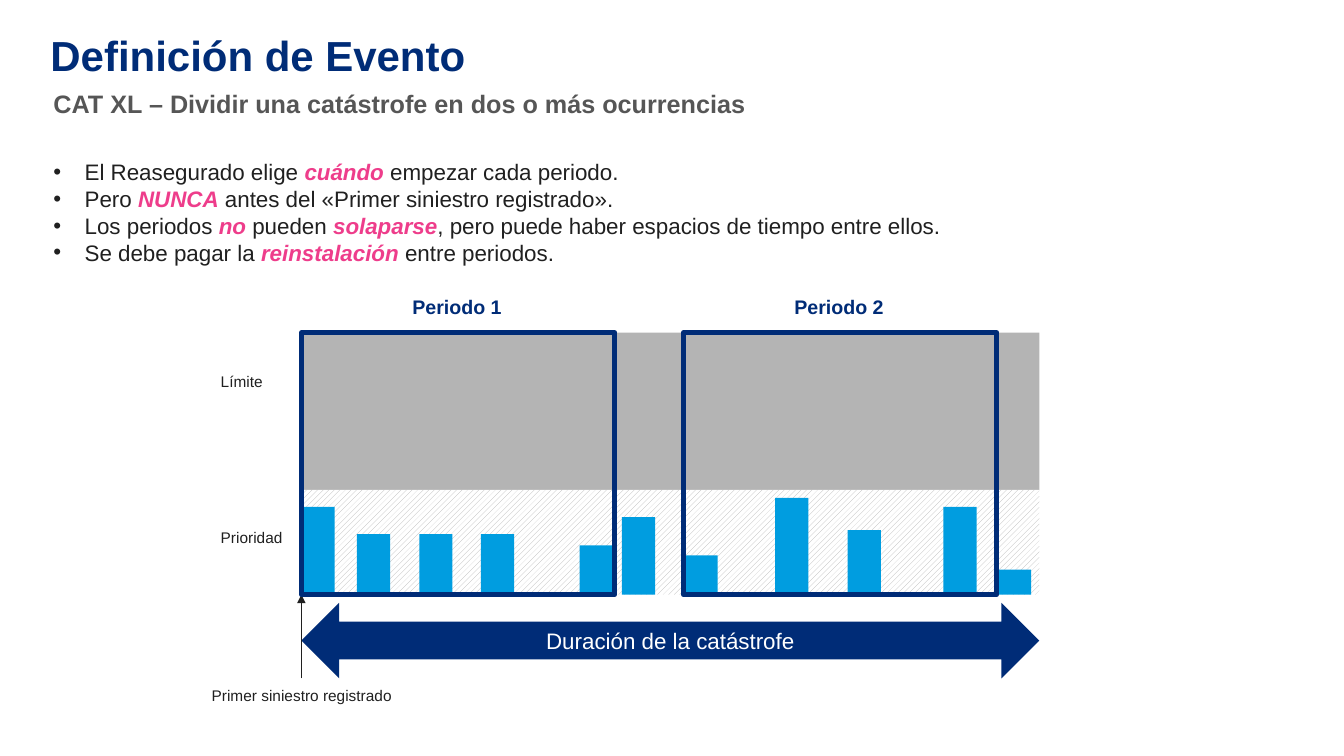
from typing import NamedTuple

from lxml import etree
from pptx import Presentation
from pptx.dml.color import RGBColor
from pptx.enum.dml import MSO_PATTERN
from pptx.enum.shapes import MSO_CONNECTOR, MSO_SHAPE
from pptx.enum.text import MSO_ANCHOR, MSO_AUTO_SIZE, PP_ALIGN
from pptx.oxml.ns import qn
from pptx.util import Inches, Pt

RECT, ARROW = MSO_SHAPE.RECTANGLE, MSO_SHAPE.LEFT_RIGHT_ARROW
STRAIGHT = MSO_CONNECTOR.STRAIGHT
HATCH = MSO_PATTERN.WIDE_UPWARD_DIAGONAL
LEFT, CENTER = PP_ALIGN.LEFT, PP_ALIGN.CENTER
TOP, MIDDLE = MSO_ANCHOR.TOP, MSO_ANCHOR.MIDDLE
NO_FIT = MSO_AUTO_SIZE.NONE

FONT = "Arial"
COLORS = {"navy": "002C77", "blue": "009DE0", "gray": "B4B4B4", "subtitle": "565656",
          "text": "202020", "pink": "EE3D8B", "white": "FFFFFF"}

# Grid of square cells: about 133 columns by 75 rows
CELL = Inches(0.1)
COLS, ROWS = 133.33, 75


class Box(NamedTuple):
    col: float
    row: float
    cols: float
    rows: float


class Bar(NamedTuple):
    col: float
    rows: float


class Label(NamedTuple):
    text: str
    box: Box
    size: int = 11
    color: str = "text"
    bold: bool = False


# Chart area
START, SPAN = 29.9, 73.2
LIMIT_ROW, PRIORITY_ROW, BASE_ROW = 33, 48.6, 59
ARROW_ROW, ARROW_ROWS = 59.8, 7.5
BAR_COLS, PERIOD_COLS = 3.3, 31.1
PERIOD_STARTS = [START, 67.8]

BARS = [Bar(START, 8.7), Bar(35.4, 6), Bar(41.6, 6), Bar(47.7, 6), Bar(57.5, 4.9),
        Bar(61.7, 7.7), Bar(67.9, 3.9), Bar(76.9, 9.6), Bar(84.1, 6.4),
        Bar(93.6, 8.7), Bar(99, 2.5)]
LABELS = [Label("Primer siniestro registrado", Box(21, 68.1, 18, 1.9)),
          Label("Prioridad", Box(21.9, 52.4, 6.6, 1.9)),
          Label("Límite", Box(21.9, 36.9, 4.6, 1.9))]
LABELS += [Label(f"Periodo {n}", Box(col + 11, 29.3, 9.1, 2.4), 14, "navy", True)
           for n, col in enumerate(PERIOD_STARTS, 1)]
# Asterisks enclose the highlighted words
RULES = ["El Reasegurado elige *cuándo* empezar cada periodo.",
         "Pero *NUNCA* antes del «Primer siniestro registrado».",
         "Los periodos *no* pueden *solaparse*, pero puede haber espacios de tiempo entre ellos.",
         "Se debe pagar la *reinstalación* entre periodos."]


def rgb(name: str) -> RGBColor:
    return RGBColor.from_string(COLORS[name])


def cells(*values: float) -> list[int]:
    return [round(v * CELL) for v in values]


def write(sp, lines: list[str], *, size: int, color: str = "text", bold: bool = False,
          align=LEFT, anchor=TOP, wrap: bool = True, bullet: bool = False,
          spacing: float = 1.0, after: float = 0) -> None:
    """Fill a shape with paragraphs; words between asterisks are highlighted."""
    tf = sp.text_frame
    tf.auto_size, tf.word_wrap, tf.vertical_anchor = NO_FIT, wrap, anchor
    tf.margin_left = tf.margin_right = tf.margin_top = tf.margin_bottom = 0
    for i, line in enumerate(lines):
        p = tf.paragraphs[0] if i == 0 else tf.add_paragraph()
        indent = Inches(0.31) if bullet else 0
        pPr = p._p.get_or_add_pPr()
        pPr.set("marL", str(indent))
        pPr.set("indent", str(-indent))
        if bullet:
            etree.SubElement(pPr, qn("a:buChar")).set("char", "•")
        else:
            etree.SubElement(pPr, qn("a:buNone"))
        p.alignment, p.line_spacing = align, spacing
        p.space_before, p.space_after = Pt(0), Pt(after)
        for j, part in enumerate(line.split("*")):
            marked = j % 2 == 1
            r = p.add_run()
            r.text = part
            r.font.name, r.font.size = FONT, Pt(size)
            r.font.bold, r.font.italic = bold or marked, marked
            r.font.color.rgb = rgb("pink" if marked else color)


def place(sp, box: Box) -> None:
    sp.left, sp.top, sp.width, sp.height = cells(*box)


def add_block(s, box: Box, fill: str | None = None, line: str | None = None,
              kind=RECT, hatched: bool = False):
    sp = s.shapes.add_shape(kind, *cells(*box))
    sp.shadow.inherit = False
    if hatched:
        sp.fill.patterned()
        sp.fill.pattern = HATCH
        sp.fill.fore_color.rgb, sp.fill.back_color.rgb = rgb(fill), rgb("white")
    elif fill:
        sp.fill.solid()
        sp.fill.fore_color.rgb = rgb(fill)
    else:
        sp.fill.background()
    if line:
        sp.line.color.rgb, sp.line.width = rgb(line), Pt(3.5)
    else:
        sp.line.fill.background()
    return sp


def add_arrow(s, col: float, row_from: float, row_to: float) -> None:
    cn = s.shapes.add_connector(STRAIGHT, *cells(col, row_from, col, row_to))
    cn.line.color.rgb, cn.line.width = rgb("text"), Pt(1)
    etree.SubElement(cn.line._get_or_add_ln(), qn("a:tailEnd")).set("type", "triangle")
    etree.SubElement(cn._element.spPr, qn("a:effectLst"))


def main() -> None:
    prs = Presentation()
    prs.slide_width, prs.slide_height = cells(COLS, ROWS)
    s = prs.slides.add_slide(prs.slide_layouts[3])

    # Title, subtitle and list
    title, subtitle, rules = s.placeholders
    place(title, Box(5, 3.9, 123.1, 5.4))
    write(title, ["Definición de Evento"], size=30, color="navy", bold=True, spacing=0.8)
    place(subtitle, Box(5.3, 8.8, 122.7, 3.5))
    write(subtitle, ["CAT XL – Dividir una catástrofe en dos o más ocurrencias"],
          size=18, color="subtitle", bold=True, after=6)
    place(rules, Box(5.3, 15.7, 115, 10.8))
    write(rules, RULES, size=16, bullet=True)

    # Limit and priority bands
    add_block(s, Box(START, LIMIT_ROW, SPAN, PRIORITY_ROW - LIMIT_ROW), "gray")
    add_block(s, Box(START, PRIORITY_ROW, SPAN, BASE_ROW - PRIORITY_ROW), "gray", hatched=True)

    # Duration and first loss
    duration = add_block(s, Box(START, ARROW_ROW, SPAN, ARROW_ROWS), "navy", kind=ARROW)
    write(duration, ["Duración de la catástrofe"], size=16, color="white",
          align=CENTER, anchor=MIDDLE)
    add_arrow(s, START, ARROW_ROW + ARROW_ROWS, BASE_ROW)

    # Losses, then the periods framing them
    for bar in BARS:
        add_block(s, Box(bar.col, BASE_ROW - bar.rows, BAR_COLS, bar.rows), "blue")
    for col in PERIOD_STARTS:
        add_block(s, Box(col, LIMIT_ROW, PERIOD_COLS, BASE_ROW - LIMIT_ROW), line="navy")

    # Labels
    for label in LABELS:
        tb = s.shapes.add_textbox(*cells(*label.box))
        write(tb, [label.text], size=label.size, color=label.color, bold=label.bold, wrap=False)

    prs.save("out.pptx")


if __name__ == "__main__":
    main()
